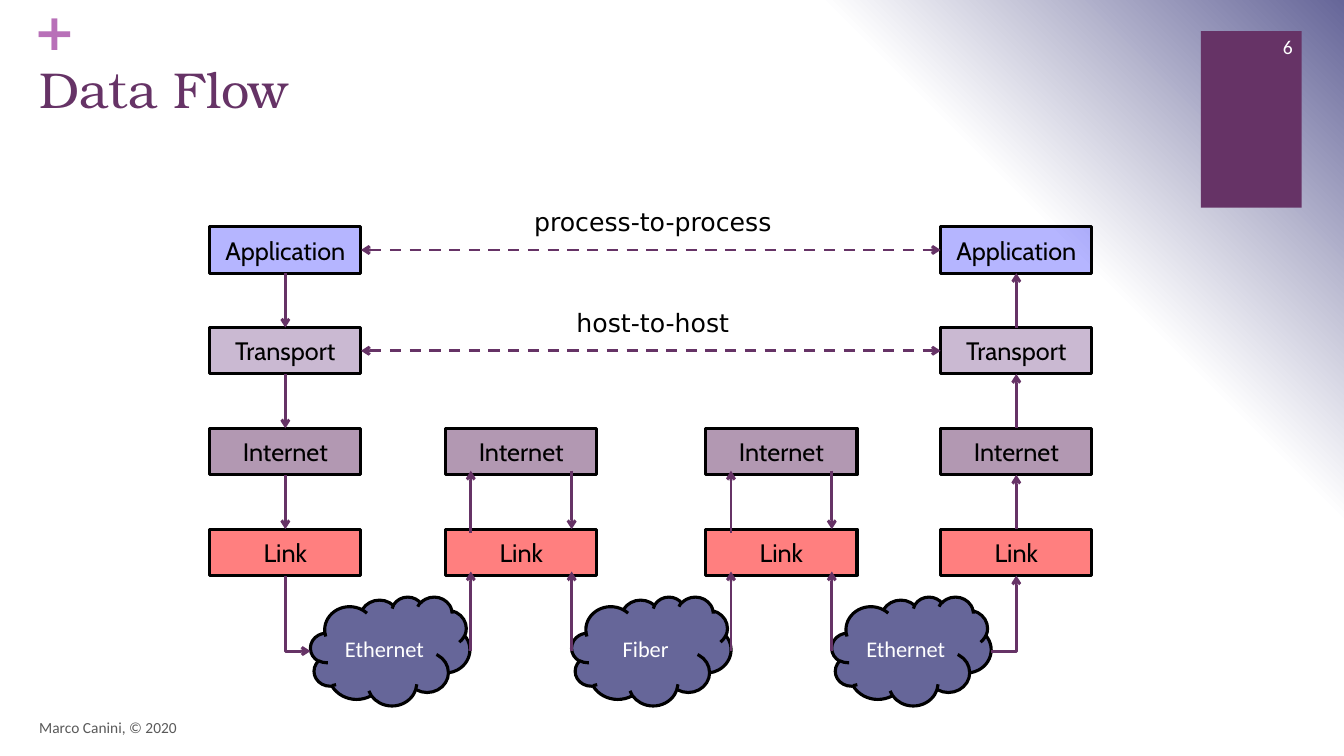
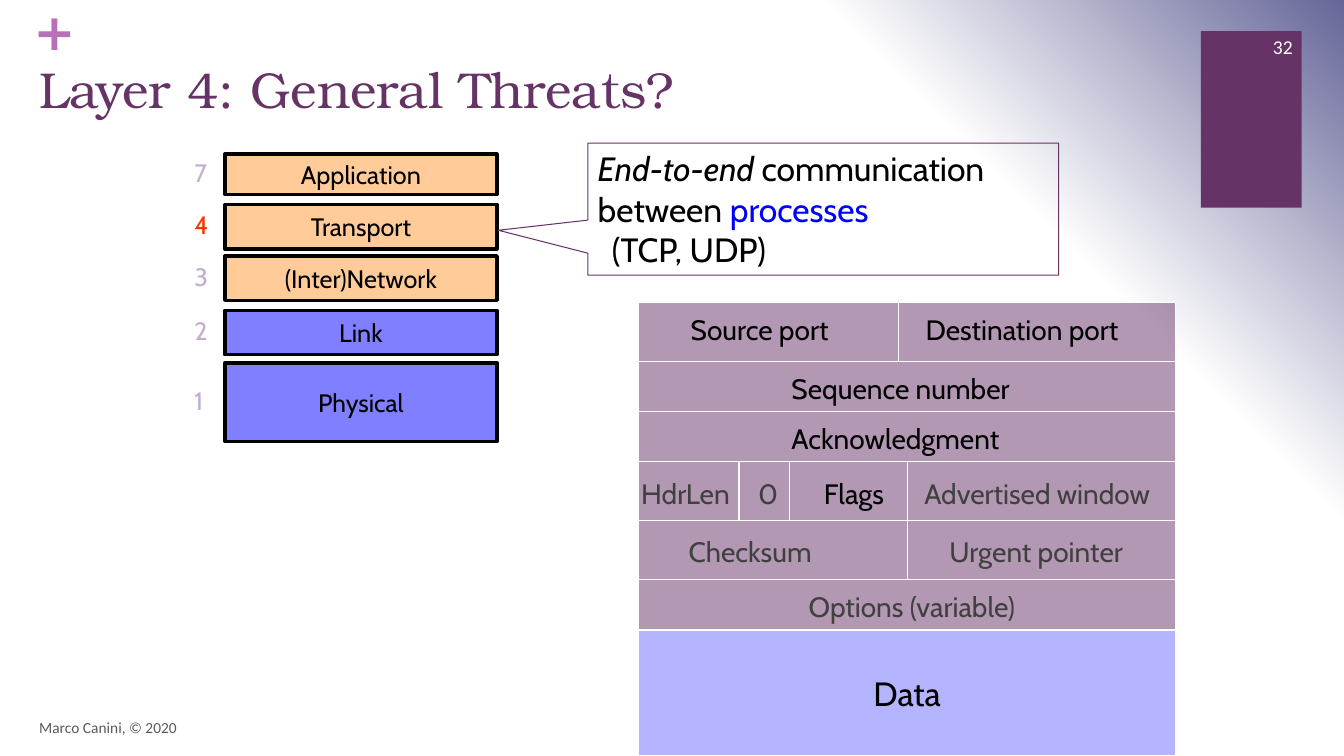
from lxml import etree
from pptx import Presentation
from pptx.dml.color import RGBColor
from pptx.enum import dml, shapes, text
from pptx.oxml import parse_xml
from pptx.oxml.ns import nsdecls, qn
from pptx.util import Inches, Pt

COLORS = {
    "white": "FFFFFF", "black": "000000", "plum": "663366", "slate": "666699",
    "orchid": "B870B8", "mauve": "9775A7", "lilac": "C3AFCC", "blue": "0000FF",
    "red": "FF0000", "scarlet": "FF3300", "peach": "FFCC99",
    "footer": "595959", "muted": "404040",
}
TITLE_FONT, BODY_FONT, UI_FONT, LABEL_FONT = "TeX Gyre Bonum", "Cabin", "Calibri", "DejaVu Sans"
LEFT, CENTER, RIGHT = text.PP_ALIGN.LEFT, text.PP_ALIGN.CENTER, text.PP_ALIGN.RIGHT
TOP, MIDDLE = text.MSO_ANCHOR.TOP, text.MSO_ANCHOR.MIDDLE
RECT = shapes.MSO_SHAPE.RECTANGLE
STRAIGHT, ELBOW = shapes.MSO_CONNECTOR.STRAIGHT, shapes.MSO_CONNECTOR.ELBOW


def rgb(name):
    return RGBColor.from_string(COLORS[name])


def inches(*lengths):
    return [Inches(length) for length in lengths]


# Building blocks
def add_run(paragraph, words, size, font, color="black", bold=False, italic=False):
    run = paragraph.add_run()
    run.text = words
    run.font.size, run.font.name = Pt(size), font
    run.font.bold, run.font.italic = bold, italic
    run.font.color.rgb = rgb(color)


def set_frame(shape, align=LEFT, anchor=TOP, insets=(0.1, 0.05, 0.1, 0.05), wrap=True):
    frame = shape.text_frame
    frame.word_wrap, frame.vertical_anchor = wrap, anchor
    (frame.margin_left, frame.margin_top,
     frame.margin_right, frame.margin_bottom) = inches(*insets)
    frame.paragraphs[0].alignment = align
    return frame.paragraphs[0]


def add_label(slide, box, words, size, font, color="black", bold=False, **frame):
    label = slide.shapes.add_textbox(*inches(*box))
    add_run(set_frame(label, **frame), words, size, font, color, bold)


def add_block(slide, box, fill=None, alpha=100, line=None, weight=2.25, kind=RECT):
    block = slide.shapes.add_shape(kind, *inches(*box))
    block.shadow.inherit = False
    if fill:
        block.fill.solid()
        block.fill.fore_color.rgb = rgb(fill)
        if alpha < 100:
            color = block.fill._xPr.find(qn("a:solidFill"))[0]
            etree.SubElement(color, qn("a:alpha"), val=str(alpha * 1000))
    else:
        block.fill.background()
    if line:
        block.line.color.rgb = rgb(line)
        block.line.width = Pt(weight)
    else:
        block.line.fill.background()
    return block


def add_arrow(slide, start, end, kind=STRAIGHT, head=False, tail=True, dashed=False):
    arrow = slide.shapes.add_connector(kind, *inches(*start, *end))
    arrow.line.color.rgb = rgb("plum")
    arrow.line.width = Pt(2)
    if dashed:
        arrow.line.dash_style = dml.MSO_LINE.DASH
    properties = arrow._element.spPr
    if kind == ELBOW:
        properties.find(qn("a:prstGeom")).set("prst", "bentConnector2")
    for tag, shown in (("a:headEnd", head), ("a:tailEnd", tail)):
        if shown:
            etree.SubElement(properties.find(qn("a:ln")), qn(tag), type="arrow")
    etree.SubElement(properties, qn("a:effectLst"))
    return arrow


def join(slide, source, source_side, target, target_side, **style):
    arrow = add_arrow(slide, (0, 0), (1, 1), **style)
    arrow.begin_connect(source, source_side)
    arrow.end_connect(target, target_side)


# Shared look
def set_background(master):
    fill = master.background.fill
    fill.solid()
    stops = "".join(
        f'<a:gs pos="{position}000"><a:srgbClr val="{COLORS[color]}"/></a:gs>'
        for position, color in ((0, "white"), (75, "white"), (100, "slate")))
    gradient = parse_xml(
        f'<a:gradFill {nsdecls("a")} rotWithShape="1"><a:gsLst>{stops}</a:gsLst>'
        '<a:path path="circle"><a:fillToRect l="0" t="100000" r="100000" b="0"/></a:path>'
        '</a:gradFill>')
    solid = fill._xPr.find(qn("a:solidFill"))
    solid.getparent().replace(solid, gradient)


def new_slide(deck, title, number):
    slide = deck.slides.add_slide(deck.slide_layouts[6])
    add_block(slide, (11.91, 0.31, 1, 1.75), "plum")
    add_label(slide, (0.33, 0, 0.38, 0.61), "+", 36, LABEL_FONT, "orchid",
              bold=True, insets=(0, 0, 0, 0))
    add_label(slide, (0.29, 0.53, 11.45, 1.22), title, 36, TITLE_FONT, "plum")
    add_label(slide, (0.29, 7.02, 8.93, 0.4), "Marco Canini, © 2020", 11, UI_FONT,
              "footer", anchor=MIDDLE)
    add_label(slide, (12.11, 0.26, 0.81, 0.4), number, 14, UI_FONT, "white",
              align=RIGHT, anchor=MIDDLE)
    return slide


# Data flow slide
STACK = [("Application", "blue", 29), ("Transport", "mauve", 50),
         ("Internet", "plum", 50), ("Link", "red", 50)]
NODE_W, NODE_H, PITCH = 1.5, 0.46, 1
CLOUD_W, CLOUD_H = 1.58, 1.08


def add_stack(slide, left, top, layers):
    nodes = []
    for row, (name, fill, alpha) in enumerate(layers):
        node = add_block(slide, (left, top + row * PITCH, NODE_W, NODE_H),
                         fill, alpha, "black")
        add_run(set_frame(node, CENTER, MIDDLE), name, 18, BODY_FONT)
        nodes.append(node)
    return nodes


def add_host(slide, left, top, sending):
    nodes = add_stack(slide, left, top, STACK)
    for upper, lower in zip(nodes, nodes[1:]):
        join(slide, upper, 2, lower, 0, head=not sending, tail=sending)
    return nodes


def add_cloud(slide, left, top, name):
    cloud = add_block(slide, (left, top, CLOUD_W, CLOUD_H), "slate", line="black",
                      kind=shapes.MSO_SHAPE.CLOUD)
    add_run(set_frame(cloud, CENTER, MIDDLE), name, 16, UI_FONT, "white")


def add_router(slide, left, top, wire):
    add_stack(slide, left, top, STACK[2:])
    up, down = left + 0.25, left + 1.25
    add_arrow(slide, (down, top + 0.42), (down, top + PITCH))
    add_arrow(slide, (up, top + 1.04), (up, top + 0.42))
    for x in (up, down):
        add_arrow(slide, (x, wire), (x, top + 1.42))


def data_flow_slide(deck):
    slide = new_slide(deck, "Data Flow", "6")
    top, sender_x, receiver_x = 2.25, 2.08, 9.33
    wire, link_bottom = 6.46, top + 3 * PITCH + NODE_H

    sender = add_host(slide, sender_x, top, sending=True)
    for left, name in ((3.08, "Ethernet"), (5.67, "Fiber"), (8.25, "Ethernet")):
        add_cloud(slide, left, 5.92, name)
    for left in (4.42, 7):
        add_router(slide, left, top + 2 * PITCH, wire)
    receiver = add_host(slide, receiver_x, top, sending=False)

    # Links from the hosts to their networks
    half = NODE_W / 2
    add_arrow(slide, (3.08, wire), (sender_x + half, link_bottom), ELBOW,
              head=True, tail=False)
    add_arrow(slide, (9.83, wire), (receiver_x + half, link_bottom), ELBOW)

    # Logical connections between the hosts
    for row, name in enumerate(("process-to-process", "host-to-host")):
        join(slide, sender[row], 3, receiver[row], 1, head=True, dashed=True)
        add_label(slide, (5.17, 2 + row * PITCH, 2.61, 0.4), name, 18, LABEL_FONT,
                  align=CENTER, wrap=False)


# Layer 4 slide
LAYERS = [  # number, name, top, height, fill, opacity
    ("7", "Application", 0, 0.4, "peach", 100),
    ("4", "Transport", 0.5, 0.44, "peach", 100),
    ("3", "(Inter)Network", 1.01, 0.44, "peach", 100),
    ("2", "Link", 1.55, 0.44, "blue", 50),
    ("1", "Physical", 2.07, 0.78, "blue", 50),
]
TALL, SHORT, FULL = 7 / 12, 0.5, 16 / 3
HALF = FULL / 2
HEADER_ROWS = [  # height, text offset, fields: right edge, name, indent, colour
    (TALL, 0.1, [(2.58, "Source port", 0.52, "black"),
                 (FULL, "Destination port", 0.27, "black")]),
    (SHORT, 0.1, [(FULL, "Sequence number", 1.52, "black")]),
    (SHORT, 0.1, [(FULL, "Acknowledgment", 1.52, "black")]),
    (TALL, 0.14, [(1, "HdrLen", 0.03, "muted"), (1.5, "0", 0.19, "muted"),
                  (HALF, "Flags", 0.34, "black"),
                  (FULL, "Advertised window", 0.17, "muted")]),
    (TALL, 0.14, [(HALF, "Checksum", 0.5, "muted"),
                  (FULL, "Urgent pointer", 0.42, "muted")]),
    (SHORT, 0.1, [(FULL, "Options (variable)", 1.69, "muted")]),
]


def add_layers(slide, left, top, current):
    for number, name, offset, height, fill, alpha in LAYERS:
        y = top + offset
        layer = add_block(slide, (left, y, 2.7, height), fill, alpha, "black", 2.5)
        add_run(set_frame(layer, CENTER, MIDDLE), name, 18, BODY_FONT)
        add_label(slide, (left - 0.4, y - 0.02, 0.38, height), number, 18, BODY_FONT,
                  "scarlet" if number == current else "lilac", anchor=MIDDLE)


def add_callout(slide, box):
    callout = add_block(slide, box, line="plum", weight=0.75,
                        kind=shapes.MSO_SHAPE.RECTANGULAR_CALLOUT)
    callout.adjustments[0], callout.adjustments[1] = -0.69, 0.16
    summary = set_frame(callout)
    add_run(summary, "End-to-end", 24, BODY_FONT, italic=True)
    add_run(summary, " communication between ", 24, BODY_FONT)
    add_run(summary, "processes", 24, BODY_FONT, "blue")
    protocols = callout.text_frame.add_paragraph()
    protocols.alignment = LEFT
    protocols._p.get_or_add_pPr().set("marL", str(Inches(0.14)))
    add_run(protocols, "(TCP, UDP)", 24, BODY_FONT)


def add_tcp_segment(slide, left, top):
    y = top
    for height, offset, fields in HEADER_ROWS:
        start = 0
        for end, name, indent, color in fields:
            field = add_block(slide, (left + start, y, end - start, height),
                              "plum", 50, "white", 0.75)
            paragraph = set_frame(field, insets=(indent, offset, 0, 0))
            add_run(paragraph, name, 20, BODY_FONT, color)
            start = end
        y += height
    data = add_block(slide, (left, y, FULL, 1.25), "blue", 29, "white", 0.75)
    add_run(set_frame(data, CENTER, MIDDLE), "Data", 24, BODY_FONT)


def threats_slide(deck):
    slide = new_slide(deck, "Layer 4: General Threats?", "32")
    add_layers(slide, 2.23, 1.53, current="4")
    add_callout(slide, (5.83, 1.42, 4.67, 1.31))
    add_tcp_segment(slide, 6.33, 3)


def main():
    deck = Presentation()
    deck.slide_width, deck.slide_height = inches(13.33, 7.5)
    set_background(deck.slide_master)
    data_flow_slide(deck)
    threats_slide(deck)
    deck.save("out.pptx")


if __name__ == "__main__":
    main()
